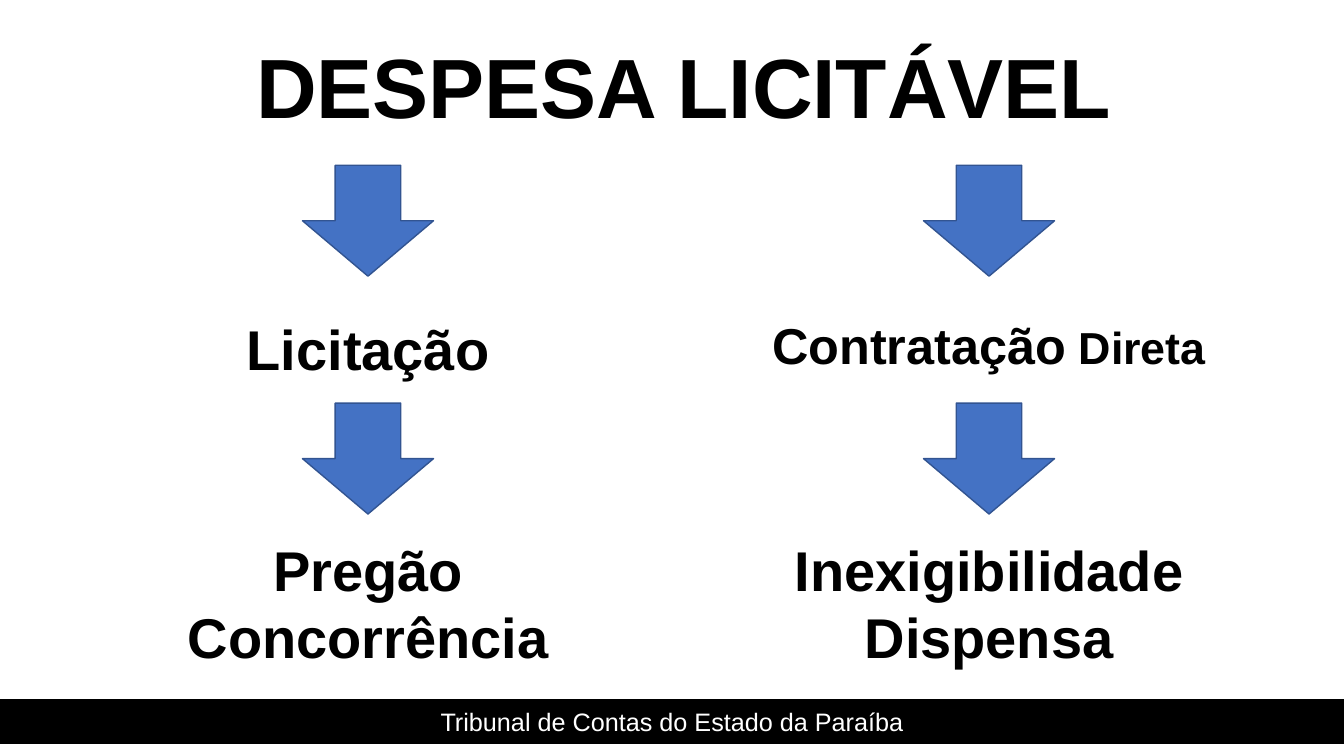
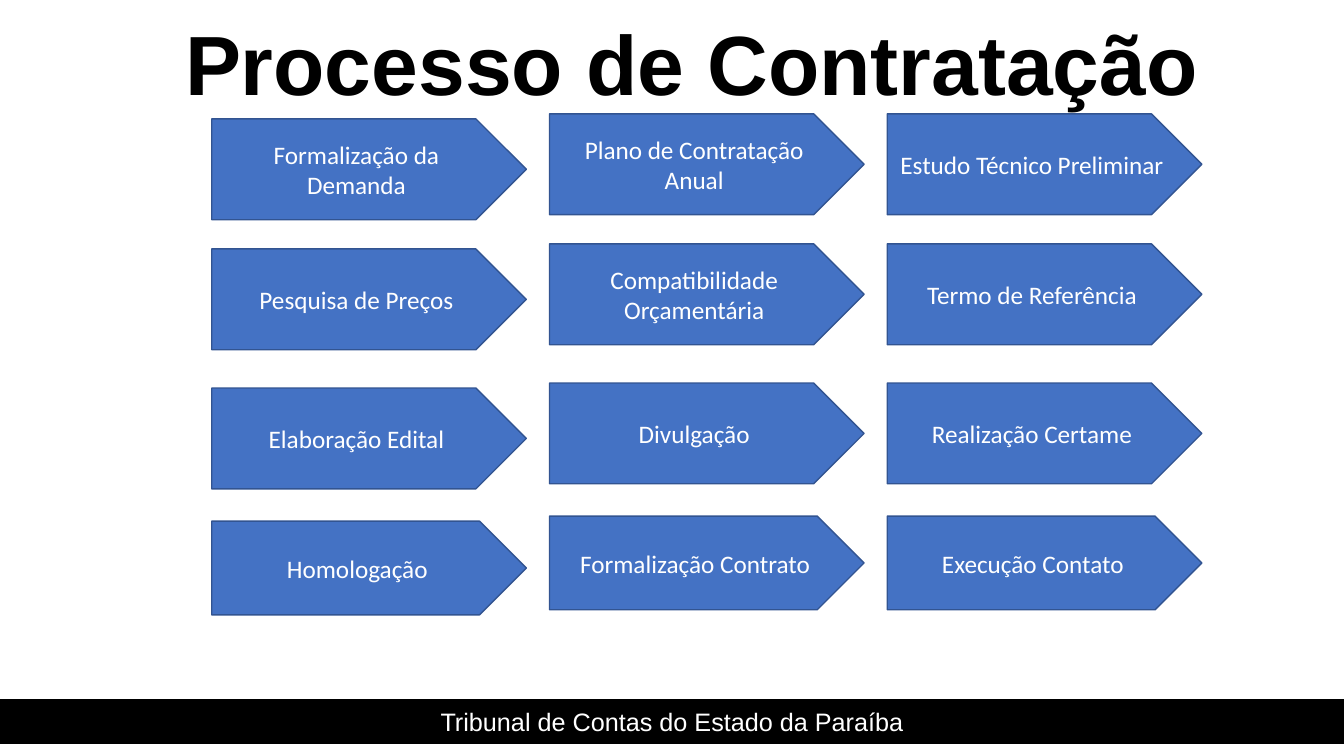
from pptx import Presentation
from pptx.dml.color import RGBColor
from pptx.enum.shapes import MSO_SHAPE as Shape
from pptx.enum.text import MSO_ANCHOR as Anchor, MSO_AUTO_SIZE as AutoSize, PP_ALIGN as Align
from pptx.util import Inches, Pt

COLORS = {"black": "000000", "white": "FFFFFF", "blue": "4472C4", "outline": "325491"}
HEADING_FONT = "Arial"
BODY_FONT = "Calibri"
FOOTER = "Tribunal de Contas do Estado da Paraíba"
TITLE_ONLY = 5


class Deck:
    """Holds the shared style and the slide being built."""

    def __init__(self):
        self.presentation = Presentation()
        self.presentation.slide_width = Inches(13.33)
        self.presentation.slide_height = Inches(7.5)
        self.slide = None

    def color(self, name):
        return RGBColor.from_string(COLORS[name])

    def add_text(self, shape, paragraphs, font, color, bold=False, anchor=Anchor.TOP):
        """Fill a shape with centred paragraphs, each a list of (text, size) runs."""
        frame = shape.text_frame
        frame.word_wrap = True
        frame.auto_size = AutoSize.NONE
        frame.vertical_anchor = anchor
        for index, runs in enumerate(paragraphs):
            paragraph = frame.add_paragraph() if index else frame.paragraphs[0]
            paragraph.alignment = Align.CENTER
            paragraph.line_spacing = 1.0
            for text, size in runs:
                run = paragraph.add_run()
                run.text = text
                run.font.name = font
                run.font.size = Pt(size)
                run.font.bold = bold
                run.font.color.rgb = self.color(color)

    def new_slide(self, title, left, top, width):
        layout = self.presentation.slide_layouts[TITLE_ONLY]
        self.slide = self.presentation.slides.add_slide(layout)
        self.band()
        shape = self.slide.shapes.title
        shape.left, shape.top = Inches(left), Inches(top)
        shape.width, shape.height = Inches(width), Inches(1.11)
        self.add_text(shape, [[(title, 60)]], HEADING_FONT, "black", bold=True)

    def shape(self, kind, left, top, width, height, fill="blue", line="outline"):
        shape = self.slide.shapes.add_shape(
            kind, Inches(left), Inches(top), Inches(width), Inches(height))
        shape.shadow.inherit = False
        shape.fill.solid()
        shape.fill.fore_color.rgb = self.color(fill)
        shape.line.color.rgb = self.color(line)
        shape.line.width = Pt(1)
        return shape

    def band(self):
        band = self.shape(Shape.RECTANGLE, 0, 6.94, 13.33, 0.43, "black", "black")
        self.add_text(band, [[(FOOTER, 18)]], HEADING_FONT, "white", anchor=Anchor.MIDDLE)

    def down_arrow(self, center, top):
        self.shape(Shape.DOWN_ARROW, center - 0.65, top, 1.3, 1.1)

    def label(self, center, top, width, height, paragraphs):
        box = self.slide.shapes.add_textbox(
            Inches(center - width / 2), Inches(top), Inches(width), Inches(height))
        self.add_text(box, paragraphs, HEADING_FONT, "black", bold=True)

    def step(self, text, left, top, height):
        step = self.shape(Shape.PENTAGON, left, top, 3.12, height)
        self.add_text(step, [[(text, 18)]], BODY_FONT, "white", anchor=Anchor.MIDDLE)


def build_expense_slide(deck):
    deck.new_slide("DESPESA LICITÁVEL", 2.07, 0.29, 9.43)
    # Each branch: centre, (width, height, runs) of its heading, width and lines of its outcome
    branches = [
        (3.65, (4, 0.77, [("Licitação", 40)]), 4, ["Pregão", "Concorrência"]),
        (9.81, (4.59, 0.71, [("Contratação", 36), (" Direta", 32)]),
         4.1, ["Inexigibilidade", "Dispensa"]),
    ]
    for center, (width, height, runs), outcome_width, outcomes in branches:
        deck.down_arrow(center, 1.64)
        deck.label(center, 3.07, width, height, [runs])
        deck.down_arrow(center, 4)
        deck.label(center, 5.26, outcome_width, 1.45, [[(text, 40)] for text in outcomes])


def build_process_slide(deck):
    deck.new_slide("Processo de Contratação", 1.73, 0.06, 10.26)
    # Each row: top, height, steps
    rows = [
        (1.13, 1, ["Formalização da Demanda", "Plano de Contratação Anual",
                   "Estudo Técnico Preliminar"]),
        (2.42, 1, ["Pesquisa de Preços", "Compatibilidade Orçamentária",
                   "Termo de Referência"]),
        (3.8, 1, ["Elaboração Edital", "Divulgação", "Realização Certame"]),
        (5.12, 0.93, ["Homologação", "Formalização Contrato", "Execução Contato"]),
    ]
    for top, height, steps in rows:
        for column, text in enumerate(steps):
            # The first column sits slightly lower than the others
            drop = 0 if column else 0.05
            deck.step(text, 2.1 + column * 3.35, top + drop, height)


def main():
    deck = Deck()
    build_expense_slide(deck)
    build_process_slide(deck)
    deck.presentation.save("out.pptx")


if __name__ == "__main__":
    main()
